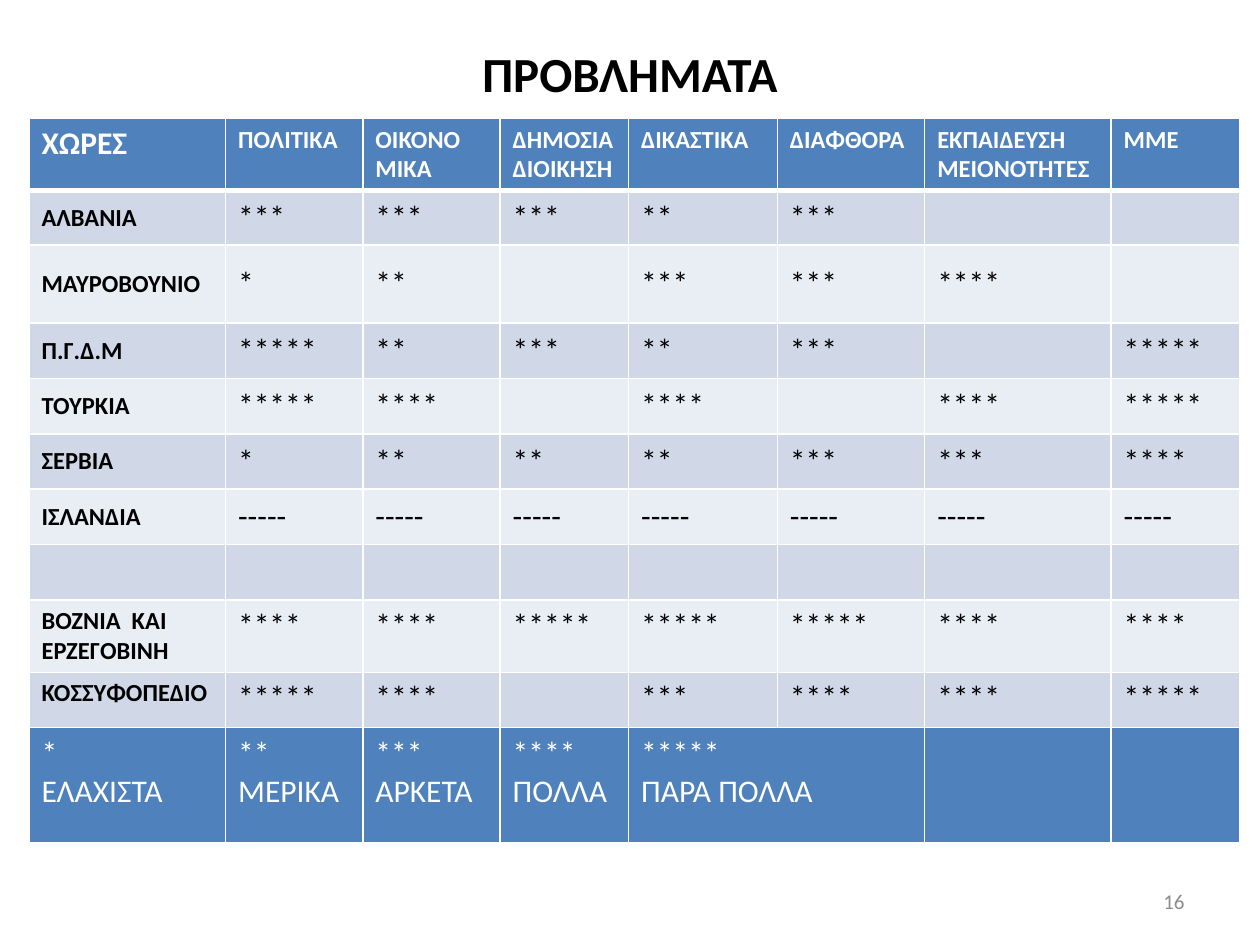
from dataclasses import dataclass

from lxml.etree import SubElement
from pptx import Presentation
from pptx.dml.color import RGBColor
from pptx.enum.text import MSO_ANCHOR as Anchor, PP_ALIGN as Align
from pptx.oxml.ns import qn
from pptx.util import Inches, Pt

COLORS = {
    "header": "4F81BD",
    "dark_band": "D0D8E8",
    "light_band": "E9EDF4",
    "white": "FFFFFF",
    "black": "000000",
    "number": "8C8C8C",
}
FONT = "Calibri"
COLUMN_WIDTHS = [1.56, 1.09, 1.09, 1.02, 1.18, 1.17, 1.48, 1.02]
HEADER_HEIGHT = 0.56
LEGEND_HEIGHT = 0.91


@dataclass(frozen=True)
class Style:
    size: float
    color: str
    bold: bool = False


@dataclass(frozen=True)
class Label:
    text: str
    left: float
    top: float
    width: float
    height: float
    align: Align
    style: Style


@dataclass(frozen=True)
class Country:
    name: str
    ratings: tuple[int, ...] = (0,) * 7
    height: float = 0.44
    anchor: Anchor = Anchor.MIDDLE
    symbol: str = "*"


LABELS = [
    Label("ΠΡΟΒΛΗΜΑΤΑ", 0.5, 0.3, 9, 0.56, Align.CENTER, Style(28, "black", True)),
    Label("16", 7.17, 6.95, 2.33, 0.4, Align.RIGHT, Style(12, "number")),
]
HEADERS = [
    "XΩΡΕΣ", "ΠΟΛΙΤΙΚΑ", "ΟΙΚΟΝΟ\nΜΙΚΑ", "ΔΗΜΟΣΙΑ ΔΙΟΙΚΗΣΗ",
    "ΔΙΚΑΣΤΙΚΑ", "ΔΙΑΦΘΟΡΑ", "ΕΚΠΑΙΔΕΥΣΗ ΜΕΙΟΝΟΤΗΤΕΣ", "ΜΜΕ",
]
COUNTRIES = [
    Country("ΑΛΒΑΝΙΑ", (3, 3, 3, 2, 3, 0, 0), 0.43),
    Country("ΜΑΥΡΟΒΟΥΝΙΟ", (1, 2, 0, 3, 3, 4, 0), 0.62),
    Country("Π.Γ.Δ.Μ", (5, 2, 3, 2, 3, 0, 5)),
    Country("ΤΟΥΡΚΙΑ", (5, 4, 0, 4, 0, 4, 5)),
    Country("ΣΕΡΒΙΑ", (1, 2, 2, 2, 3, 3, 4)),
    Country("ΙΣΛΑΝΔΙΑ", (5,) * 7, symbol="-"),
    Country(""),
    Country("ΒΟΖΝΙΑ  ΚΑΙ\nΕΡΖΕΓΟΒΙΝΗ", (4, 4, 5, 5, 5, 4, 4), 0.54, Anchor.TOP),
    Country("ΚΟΣΣΥΦΟΠΕΔΙΟ", (5, 4, 0, 3, 4, 4, 5), anchor=Anchor.TOP),
]
LEGEND = ["ΕΛΑΧΙΣΤΑ", "ΜΕΡΙΚΑ", "ΑΡΚΕΤΑ", "ΠΟΛΛΑ", "ΠΑΡΑ ΠΟΛΛΑ"]


def rgb(name: str) -> RGBColor:
    return RGBColor.from_string(COLORS[name])


def write(frame, text: str, style: Style, align: Align = Align.LEFT) -> None:
    frame.text = text
    for para in frame.paragraphs:
        para.alignment = align
        for font in [para.font, *(span.font for span in para.runs)]:
            font.name = FONT
            font.size = Pt(style.size)
            font.bold = style.bold
            font.color.rgb = rgb(style.color)


def add_label(page, label: Label) -> None:
    box = page.shapes.add_textbox(
        Inches(label.left), Inches(label.top), Inches(label.width), Inches(label.height)
    )
    frame = box.text_frame
    frame.word_wrap = True
    frame.vertical_anchor = Anchor.MIDDLE
    write(frame, label.text, label.style, label.align)


def set_borders(cell, top: float, bottom: float) -> None:
    properties = cell._tc.get_or_add_tcPr()
    for side, points in {"L": 1, "R": 1, "T": top, "B": bottom}.items():
        line = SubElement(properties, qn(f"a:ln{side}"), w=str(Pt(points)))
        fill = SubElement(line, qn("a:solidFill"))
        SubElement(fill, qn("a:srgbClr"), val=COLORS["white"])


def fill_cell(cell, text: str, style: Style, fill: str, anchor: Anchor = Anchor.TOP,
              top: float = 1, bottom: float = 1) -> None:
    set_borders(cell, top, bottom)
    cell.fill.solid()
    cell.fill.fore_color.rgb = rgb(fill)
    cell.vertical_anchor = anchor
    write(cell.text_frame, text, style)


def add_problem_table(page) -> None:
    heights = [HEADER_HEIGHT, *(country.height for country in COUNTRIES), LEGEND_HEIGHT]
    table = page.shapes.add_table(
        len(heights), len(COLUMN_WIDTHS), Inches(0.23), Inches(0.94),
        Inches(sum(COLUMN_WIDTHS)), Inches(sum(heights)),
    ).table
    for column, width in zip(table.columns, COLUMN_WIDTHS):
        column.width = Inches(width)
    for row, height in zip(table.rows, heights):
        row.height = Inches(height)

    for index, text in enumerate(HEADERS):
        style = Style(14 if index else 18, "white", True)
        fill_cell(table.cell(0, index), text, style, "header", bottom=3)

    for row, country in enumerate(COUNTRIES, 1):
        band = "dark_band" if row % 2 else "light_band"
        texts = [country.name, *(country.symbol * count for count in country.ratings)]
        for index, text in enumerate(texts):
            style = Style(18, "black") if index else Style(14, "black", True)
            fill_cell(table.cell(row, index), text, style, band, country.anchor,
                      top=3 if row == 1 else 1)

    last = len(heights) - 1
    texts = [f"{'*' * count}\n{name}" for count, name in enumerate(LEGEND, 1)]
    texts += [""] * (len(COLUMN_WIDTHS) - len(texts))
    for index, text in enumerate(texts):
        fill_cell(table.cell(last, index), text, Style(18, "white"), "header")
        if index == len(LEGEND):
            table.cell(last, index - 1).merge(table.cell(last, index))
    


def main() -> None:
    deck = Presentation()
    deck.slide_width = Inches(10)
    deck.slide_height = Inches(7.5)
    page = deck.slides.add_slide(deck.slide_layouts[6])
    add_problem_table(page)
    for label in LABELS:
        add_label(page, label)
    deck.save("out.pptx")


if __name__ == "__main__":
    main()
